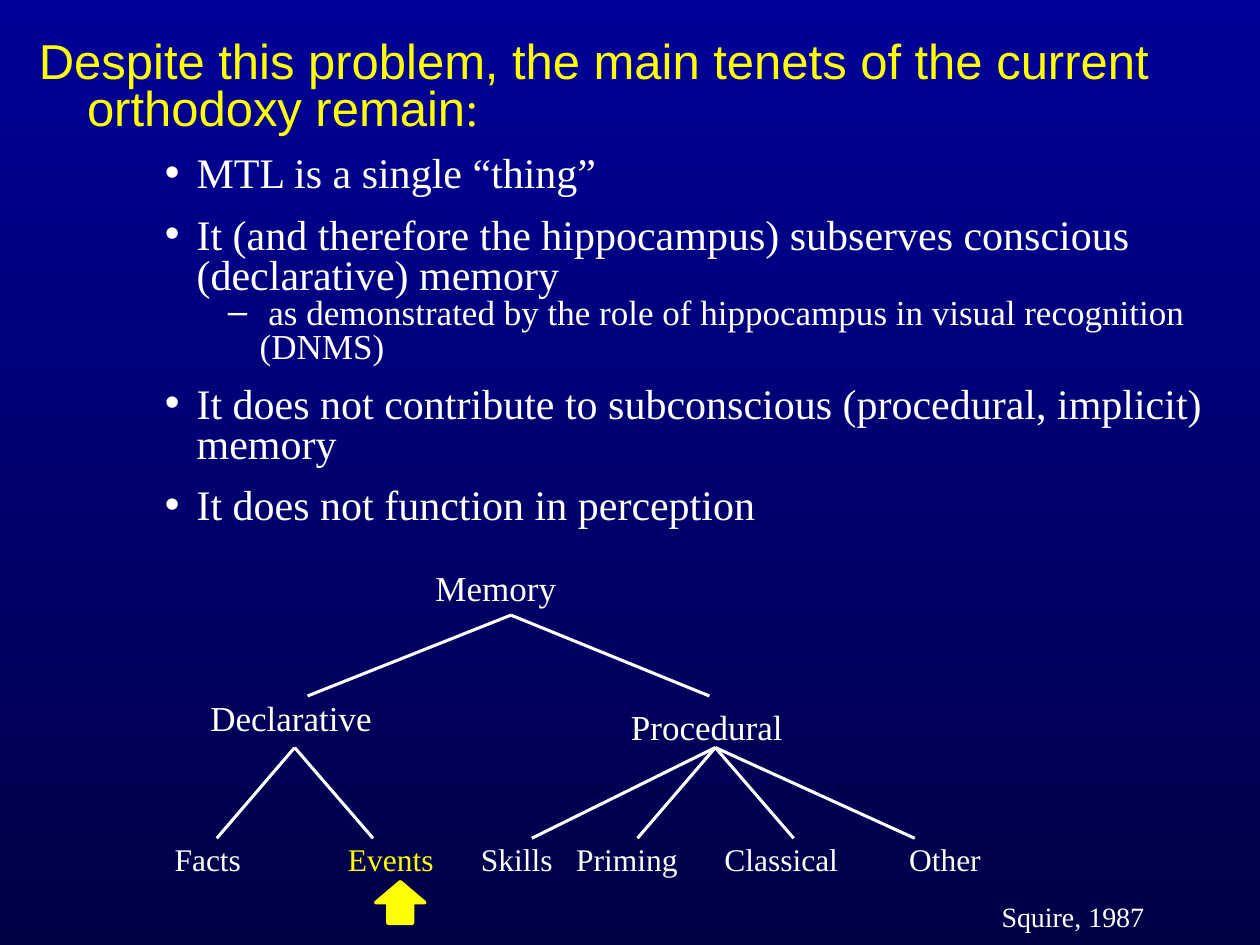
from lxml import etree
from pptx import Presentation
from pptx import util as u
from pptx.dml.color import RGBColor
from pptx.enum import shapes, text
from pptx.oxml.ns import qn

Cm, Pt = u.Cm, u.Pt
WHITE = RGBColor(0xFF, 0xFF, 0xFF)
YELLOW = RGBColor(0xFF, 0xFF, 0x00)
NIGHT = (RGBColor(0x00, 0x00, 0x99), RGBColor(0x00, 0x00, 0x47))
SANS, SERIF = "Arial", "Times New Roman"

HEADING = ("Despite this problem, the main tenets of the current orthodoxy remain", ":")
TENETS = [  # level, wording
    (2, "MTL is a single “thing”"),
    (2, "It (and therefore the hippocampus) subserves conscious (declarative) memory"),
    (3, " as demonstrated by the role of hippocampus in visual recognition (DNMS)"),
    (2, "It does not contribute to subconscious (procedural, implicit) memory"),
    (2, "It does not function in perception"),
]
LEVELS = {  # bullet, size, space before, left margin and hanging indent in cm
    0: (None, 28, 5.6, 0.97, 0.97),
    2: ("•", 24, 12, 3.18, 0.64),
    3: ("–", 20, 0, 4.45, 0.64),
}

# Tree, in cm: wording, left, top, width, size
NODES = [
    ("Memory", 8.53, 11.3, 3.56, 20),
    ("Declarative", 3.99, 13.92, 3.8, 20),
    ("Procedural", 12.47, 14.1, 3.61, 20),
    ("Squire, 1987", 19.94, 18.01, 4.32, 16),
]
LEAVES = [  # wording, centre
    ("Facts", 4.19, WHITE), ("Events", 7.88, YELLOW), ("Skills", 10.42, WHITE),
    ("Priming", 12.64, WHITE), ("Classical", 15.75, WHITE), ("Other", 19.05, WHITE),
]
LEAF_TOP, LEAF_WIDTH = 16.81, 3
BRANCHES = [  # fork point, level of the branch ends, their horizontal places
    ((10.3, 12.4), 14.03, (6.2, 14.3)),
    ((5.94, 15.07), 16.9, (4.37, 7.52)),
    ((14.42, 15.07), 16.9, (10.72, 12.85, 16, 18.44)),
]


def add_span(para, wording, **formats):
    span = para.add_run()
    span.text = wording
    color = formats.pop("color")
    for name, value in formats.items():
        setattr(span.font, name, value)
    span.font.color.rgb = color


def format_para(para, level):
    """Apply spacing, indents and bullet of an outline level."""
    bullet, _, before, margin, hanging = LEVELS[level]
    settings = dict(level=level, line_spacing=0.8, space_before=Pt(before),
                    space_after=Pt(0), alignment=text.PP_ALIGN.LEFT)
    for name, value in settings.items():
        setattr(para, name, value)
    props = para._p.get_or_add_pPr()
    props.set("marL", str(Cm(margin)))
    props.set("indent", str(-Cm(hanging)))
    if bullet:
        etree.SubElement(props, qn("a:buChar")).set("char", bullet)
    else:
        etree.SubElement(props, qn("a:buNone"))


def add_label(page, wording, left, top, width, size, color=WHITE,
              alignment=text.PP_ALIGN.LEFT):
    box = page.shapes.add_textbox(Cm(left), Cm(top), Cm(width), Pt(size * 1.2 + 7.2))
    box.text_frame.word_wrap = True
    para = box.text_frame.paragraphs[0]
    para.alignment = alignment
    add_span(para, wording, size=Pt(size), name=SERIF, color=color)


def add_branch(page, start, end):
    points = [Cm(value) for value in (*start, *end)]
    line = page.shapes.add_connector(shapes.MSO_CONNECTOR.STRAIGHT, *points)
    line.line.color.rgb = WHITE
    line.line.width = Pt(1.75)
    etree.SubElement(line._element.spPr, qn("a:effectLst"))


def add_outline(page):
    body = page.placeholders[1]
    for name, value in dict(left=0.53, top=0.71, width=24.16, height=6.83).items():
        setattr(body, name, Cm(value))
    frame = body.text_frame
    frame.auto_size = text.MSO_AUTO_SIZE.NONE
    frame.vertical_anchor = text.MSO_ANCHOR.TOP
    para = frame.paragraphs[0]
    format_para(para, 0)
    for wording, font in zip(HEADING, (SANS, SERIF)):
        add_span(para, wording, size=Pt(LEVELS[0][1]), name=font, color=YELLOW)
    for level, wording in TENETS:
        para = frame.add_paragraph()
        format_para(para, level)
        add_span(para, wording, size=Pt(LEVELS[level][1]), name=SERIF, color=WHITE)


def add_tree(page):
    for node in NODES:
        add_label(page, *node)
    for wording, centre, color in LEAVES:
        add_label(page, wording, centre - LEAF_WIDTH / 2, LEAF_TOP, LEAF_WIDTH, 18,
                  color, text.PP_ALIGN.CENTER)
    for fork, level, ends in BRANCHES:
        for end in ends:
            add_branch(page, fork, (end, level))
    arrow = page.shapes.add_shape(shapes.MSO_SHAPE.RIGHT_ARROW,
                                  Cm(7.65), Cm(17.7), Cm(0.84), Cm(0.99))
    arrow.rotation = 270
    arrow.shadow.inherit = False
    arrow.fill.solid()
    arrow.fill.fore_color.rgb = arrow.line.color.rgb = YELLOW
    arrow.line.width = Pt(2)


def main():
    deck = Presentation()
    deck.slide_width, deck.slide_height = Cm(25.4), Cm(19.05)
    page = deck.slides.add_slide(deck.slide_layouts[1])
    title = page.shapes.title._element
    title.getparent().remove(title)
    fill = page.background.fill
    fill.gradient()
    fill.gradient_angle = 270
    for stop, color, position in zip(fill.gradient_stops, NIGHT, (0, 1)):
        stop.color.rgb = color
        stop.position = position
    add_outline(page)
    add_tree(page)
    deck.save("out.pptx")


if __name__ == "__main__":
    main()
